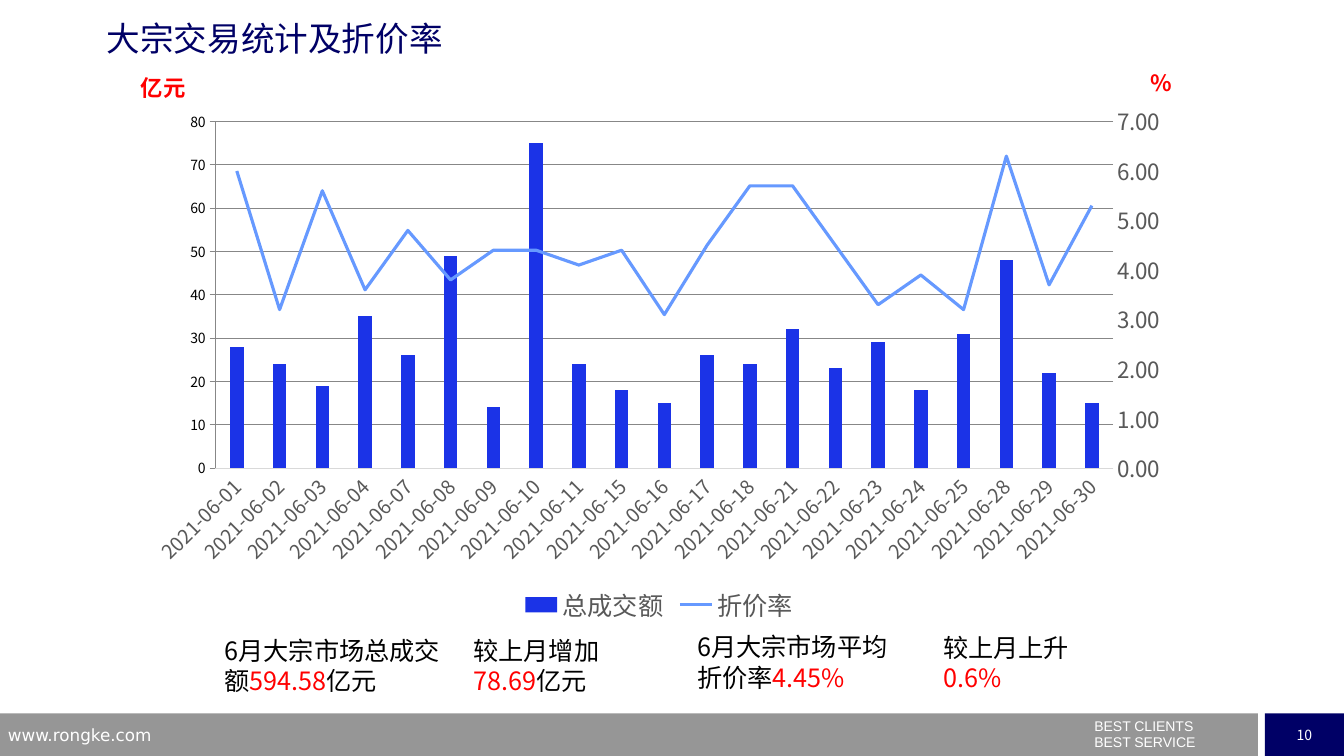
from dataclasses import dataclass

from lxml.etree import SubElement
from pptx import Presentation
from pptx.chart.axis import ValueAxis
from pptx.chart.data import CategoryChartData
from pptx.dml.color import RGBColor
from pptx.enum.chart import XL_CHART_TYPE, XL_LEGEND_POSITION, XL_MARKER_STYLE, XL_TICK_MARK
from pptx.enum.shapes import MSO_SHAPE
from pptx.enum.text import MSO_ANCHOR, MSO_AUTO_SIZE, PP_ALIGN
from pptx.oxml import parse_xml
from pptx.oxml.ns import nsdecls, qn
from pptx.util import Cm, Pt


@dataclass(frozen=True)
class Theme:
    """Hold the colours, fonts and type sizes of the slide."""
    navy: str = "000066"
    grey: str = "969696"
    white: str = "FFFFFF"
    black: str = "000000"
    red: str = "FF0000"
    label: str = "595959"
    grid: str = "D9D9D9"
    bar: str = "1B33E7"
    line: str = "6699FF"
    main: str = "Noto Sans CJK SC"
    sans: str = "Arial"
    web: str = "DejaVu Sans"
    head: int = 24
    body: int = 18
    unit: int = 16
    date: int = 14
    url: int = 12
    small: int = 10


THEME = Theme()

DAYS = [1, 2, 3, 4, 7, 8, 9, 10, 11, 15, 16, 17, 18, 21, 22, 23, 24, 25, 28, 29, 30]
TRADES = [28, 24, 19, 35, 26, 49, 14, 75, 24, 18, 15, 26, 24, 32, 23, 29, 18, 31, 48, 22, 15]
RATES = [6, 3.2, 5.6, 3.6, 4.8, 3.8, 4.4, 4.4, 4.1, 4.4, 3.1,
         4.5, 5.7, 5.7, 4.5, 3.3, 3.9, 3.2, 6.3, 3.7, 5.3]

NOTES = [
    ((5.41, 15.88, 6.05, 1.8), [[("6月大宗市场总成交额", THEME.black), ("594.58", THEME.red),
                                 ("亿元", THEME.black)]]),
    ((11.68, 15.88, 4.88, 1.8), [[("较上月增加", THEME.black)],
                                 [("78.69", THEME.red), ("亿元", THEME.black)]]),
    ((17.32, 15.8, 5.51, 1.8), [[("6月大宗市场平均折价率", THEME.black), ("4.45%", THEME.red)]]),
    ((23.52, 15.82, 4.19, 1.8), [[("较上月上升", THEME.black), ("0.6%", THEME.red)]]),
]
UNITS = [((3.3, 1.73, 1.75, 0.94), "亿元"), ((28.75, 1.6, 1.47, 0.94), "%")]

LAYOUT = f"""<c:layout {nsdecls('c')}><c:manualLayout><c:layoutTarget val="inner"/>
<c:xMode val="edge"/><c:yMode val="edge"/><c:x val="0.08"/><c:y val="0.05"/>
<c:w val="0.85"/><c:h val="0.65"/></c:manualLayout></c:layout>"""
LINES = f"""<c:lineChart {nsdecls('c')}><c:grouping val="standard"/><c:varyColors val="0"/>
<c:marker val="1"/><c:axId val="501"/><c:axId val="502"/></c:lineChart>"""
DATES = f"""<c:catAx {nsdecls('c')}><c:axId val="501"/><c:scaling><c:orientation val="minMax"/>
</c:scaling><c:delete val="1"/><c:axPos val="b"/><c:crossAx val="502"/>
<c:crosses val="autoZero"/></c:catAx>"""
RIGHT = f"""<c:valAx {nsdecls('c')}><c:axId val="502"/><c:scaling><c:orientation val="minMax"/>
</c:scaling><c:delete val="0"/><c:axPos val="r"/><c:majorTickMark val="out"/>
<c:minorTickMark val="none"/><c:tickLblPos val="nextTo"/><c:crossAx val="501"/>
<c:crosses val="max"/></c:valAx>"""


def place(spot):
    """Turn a spot in centimetres into lengths."""
    return [Cm(size) for size in spot]


def paint(font, size, tint, face=THEME.main, bold=False):
    """Set the look of a font, for Latin and Chinese letters alike."""
    font.size, font.bold = Pt(size), bold
    font.color.rgb = RGBColor.from_string(tint)
    font.name = face
    SubElement(font._element, qn("a:ea")).set("typeface", face)


def write(frame, paras, size, face=THEME.main, bold=False, pitch=None, gap=0):
    """Fill a text frame run by run."""
    for rank, runs in enumerate(paras):
        para = frame.add_paragraph() if rank else frame.paragraphs[0]
        if pitch:
            para.line_spacing = pitch
        if rank and gap:
            para.space_before = Pt(gap)
        for text, tint in runs:
            run = para.add_run()
            run.text = text
            paint(run.font, size, tint, face, bold)


def add_text(slide, spot, paras, size, **style):
    """Add a text box that wraps."""
    frame = slide.shapes.add_textbox(*place(spot)).text_frame
    frame.word_wrap = True
    write(frame, paras, size, **style)


def add_block(slide, spot, tint):
    """Add a plain filled rectangle."""
    block = slide.shapes.add_shape(MSO_SHAPE.RECTANGLE, *place(spot))
    block.shadow.inherit = False
    block.fill.solid()
    block.fill.fore_color.rgb = RGBColor.from_string(tint)
    block.line.fill.background()
    return block


def add_title(slide, spot, text):
    """Move and fill the title."""
    title = slide.shapes.title
    title.left, title.top, title.width, title.height = place(spot)
    frame = title.text_frame
    frame.margin_left = frame.margin_top = frame.margin_right = frame.margin_bottom = 0
    frame.vertical_anchor = MSO_ANCHOR.TOP
    frame.auto_size = MSO_AUTO_SIZE.NONE
    write(frame, [[(text, THEME.navy)]], THEME.head)
    frame.paragraphs[0].alignment = PP_ALIGN.LEFT


def add_foot(slide):
    """Draw the band at the foot of the slide."""
    add_block(slide, (0, 17.98, 31.7, 1.07), THEME.grey)
    page = add_block(slide, (31.88, 17.98, 1.99, 1.07), THEME.navy).text_frame
    page.vertical_anchor = MSO_ANCHOR.MIDDLE
    write(page, [[("10", THEME.white)]], THEME.small)
    page.paragraphs[0].alignment = PP_ALIGN.CENTER
    creed = [[("BEST CLIENTS", THEME.white)], [("BEST SERVICE", THEME.white)]]
    add_text(slide, (27.33, 18.14, 6.5, 0.91), creed, THEME.small,
             face=THEME.sans, pitch=0.5, gap=5.5)
    add_text(slide, (-0.05, 18.14, 8.18, 0.66), [[("www.rongke.com", THEME.white)]],
             THEME.url, face=THEME.web)


def split_rate(chart):
    """Move the second series to a line on a right axis."""
    plot = chart._chartSpace.chart.plotArea
    for old in plot.findall(qn("c:layout")):
        plot.remove(old)
    plot.insert(0, parse_xml(LAYOUT))
    bars = plot.find(qn("c:barChart"))
    rate = bars.findall(qn("c:ser"))[1]
    for flag in rate.findall(qn("c:invertIfNegative")):
        rate.remove(flag)
    lines = parse_xml(LINES)
    lines.insert(2, rate)
    bars.addnext(lines)
    right = parse_xml(RIGHT)
    last = plot.findall(qn("c:valAx"))[-1]
    last.addnext(right)
    last.addnext(parse_xml(DATES))
    return ValueAxis(right)


def style_scale(axis, top, step, form):
    """Style a value axis."""
    axis.minimum_scale, axis.maximum_scale, axis.major_unit = 0, top, step
    axis.tick_labels.number_format = form
    axis.tick_labels.number_format_is_linked = False
    axis.format.line.fill.background()
    paint(axis.tick_labels.font, THEME.unit, THEME.label)


def style_rule(line, tint, width):
    """Set the colour and width of a line."""
    line.color.rgb = RGBColor.from_string(tint)
    line.width = Pt(width)


def add_graph(slide, spot):
    """Add the chart of trades and discount rates."""
    data = CategoryChartData()
    data.categories = [f"2021-06-{day:02}" for day in DAYS]
    data.add_series("总成交额", TRADES)
    data.add_series("折价率", RATES)
    chart = slide.shapes.add_chart(XL_CHART_TYPE.COLUMN_CLUSTERED, *place(spot), data).chart
    paint(chart.font, THEME.small, THEME.black)
    chart.has_title = False
    chart.has_legend = True
    chart.legend.position = XL_LEGEND_POSITION.BOTTOM
    chart.legend.include_in_layout = False
    paint(chart.legend.font, THEME.body, THEME.label)

    right = split_rate(chart)
    bars, lines = chart.plots
    bars.gap_width, bars.overlap, bars.vary_by_categories = 219, -27, False
    fill = bars.series[0].format.fill
    fill.solid()
    fill.fore_color.rgb = RGBColor.from_string(THEME.bar)
    rate = lines.series[0]
    rate.smooth = False
    rate.marker.style = XL_MARKER_STYLE.NONE
    style_rule(rate.format.line, THEME.line, 2.25)

    left, dates = chart.value_axis, chart.category_axis
    style_scale(left, 80, 10, "0.00_ ")
    style_scale(right, 7, 1, "0.00")
    left.major_tick_mark = dates.major_tick_mark = XL_TICK_MARK.NONE
    style_rule(left.major_gridlines.format.line, THEME.grid, 0.75)
    style_rule(dates.format.line, THEME.grid, 0.75)
    paint(dates.tick_labels.font, THEME.date, THEME.label)
    dates._element.find(qn("c:txPr")).find(qn("a:bodyPr")).set("rot", "-2700000")


def main():
    """Build the slide and save it."""
    deck = Presentation()
    deck.slide_width, deck.slide_height = Cm(33.87), Cm(19.05)
    slide = deck.slides.add_slide(deck.slide_layouts[5])
    add_foot(slide)
    add_title(slide, (2.69, 0.46, 22.86, 1.3), "大宗交易统计及折价率")
    for spot, paras in NOTES:
        add_text(slide, spot, paras, THEME.body, pitch=Pt(21.5))
    add_graph(slide, (3.3, 2.39, 26.62, 13.44))
    for spot, text in UNITS:
        add_text(slide, spot, [[(text, THEME.red)]], THEME.unit, bold=True, pitch=Pt(19.5))
    deck.save("out.pptx")


if __name__ == "__main__":
    main()
